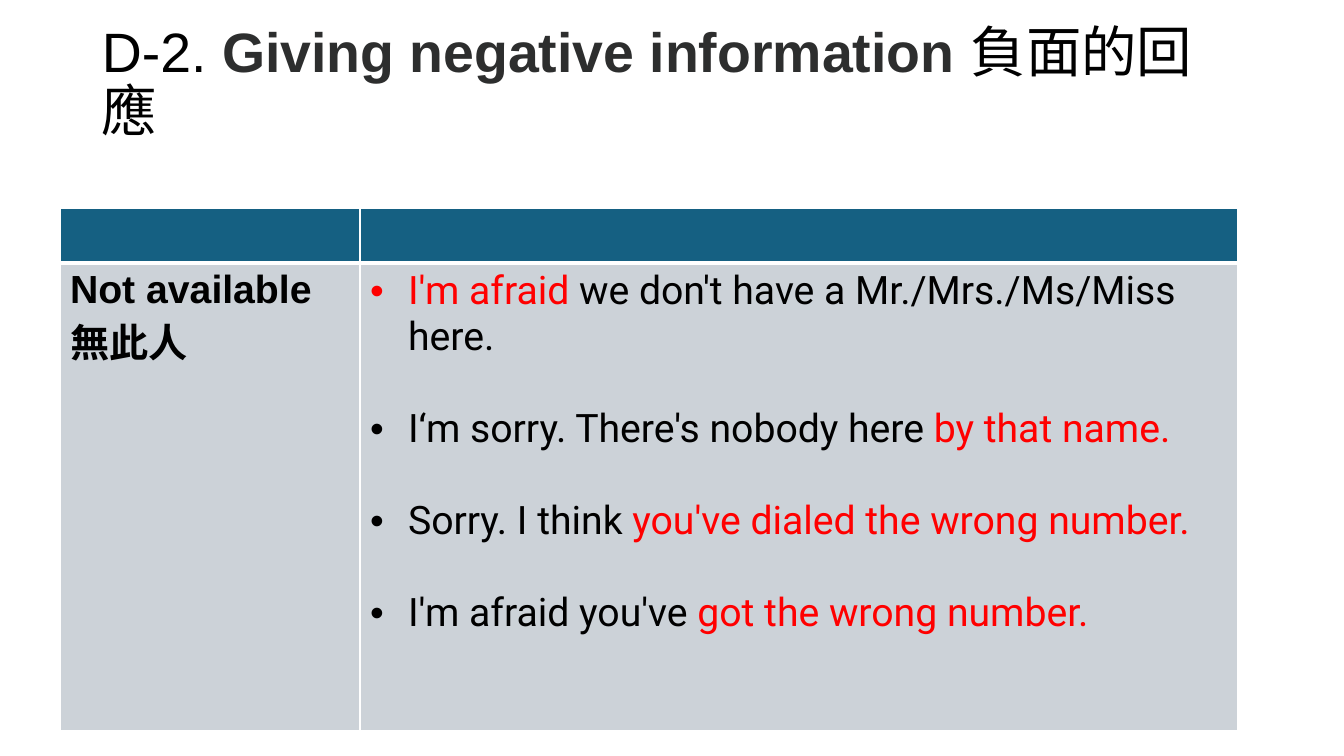
from lxml import etree
from pptx import Presentation
from pptx.dml.color import RGBColor
from pptx.enum.text import MSO_ANCHOR
from pptx.oxml.ns import qn
from pptx.util import Pt

MIDDLE = MSO_ANCHOR.MIDDLE
BLACK, GREY, RED, WHITE = "000000", "2D2E2E", "FF0000", "FFFFFF"
HEADER_FILL, BODY_FILL = "156082", "CCD2D8"

# Content: runs are (text, colour, bold)
TITLE = [("D-2. ", BLACK, False),
         ("Giving negative information ", GREY, True),
         ("負面的回應", BLACK, False)]
TOPIC = ["Not available", "無此人"]
PHRASES = [
    [("I'm afraid ", RED, False),
     ("we don't have a Mr./Mrs./Ms/Miss here.", BLACK, False)],
    [("I‘m sorry. There's nobody here ", BLACK, False),
     ("by that name.", RED, False)],
    [("Sorry. I think ", BLACK, False),
     ("you've dialed the wrong number.", RED, False)],
    [("I'm afraid you've ", BLACK, False),
     ("got the wrong number.", RED, False)],
]

# Layout in px
SLIDE_W, SLIDE_H = 1344, 756
TITLE_BOX = (92, 40, 1159, 146)
TITLE_BOTTOM_INSET = 63
TABLE_X, TABLE_Y = 60, 208
COLS, ROWS = [300, 878], [55, 468]
BULLET_INDENT = 38


def px(n):
    return round(n * 12192000 / SLIDE_W)


def rgb(hex_colour):
    return RGBColor.from_string(hex_colour)


def add_runs(p, runs, font, size):
    for text, colour, bold in runs:
        r = p.add_run()
        r.text = text
        r.font.name, r.font.size, r.font.bold = font, Pt(size), bold
        r.font.color.rgb = rgb(colour)


def add_bullet(p):
    pPr = p._p.get_or_add_pPr()
    pPr.set("marL", str(px(BULLET_INDENT)))
    pPr.set("indent", str(-px(BULLET_INDENT)))
    etree.SubElement(pPr, qn("a:buFont")).set("typeface", "Arial")
    etree.SubElement(pPr, qn("a:buChar")).set("char", "•")


def style_cell(cell, fill, top, bottom):
    cell.fill.solid()
    cell.fill.fore_color.rgb = rgb(fill)
    tcPr = cell._tc.get_or_add_tcPr()
    widths = {"a:lnL": 1, "a:lnR": 1, "a:lnT": top, "a:lnB": bottom}
    for i, (tag, width) in enumerate(widths.items()):
        ln = etree.Element(qn(tag), w=str(Pt(width)))
        line_fill = etree.SubElement(ln, qn("a:solidFill"))
        etree.SubElement(line_fill, qn("a:srgbClr")).set("val", WHITE)
        tcPr.insert(i, ln)


def paragraphs(tf, count):
    return [tf.paragraphs[0]] + [tf.add_paragraph() for _ in range(count - 1)]


prs = Presentation()
prs.slide_width, prs.slide_height = px(SLIDE_W), px(SLIDE_H)
s = prs.slides.add_slide(prs.slide_layouts[6])

# Title
tf = s.shapes.add_textbox(*map(px, TITLE_BOX)).text_frame
tf.word_wrap = True
tf.vertical_anchor = MIDDLE
tf.margin_bottom = px(TITLE_BOTTOM_INSET)
p = tf.paragraphs[0]
p.line_spacing = 0.9
add_runs(p, TITLE, "Arial", 39.6)

# Table
table = s.shapes.add_table(len(ROWS), len(COLS), px(TABLE_X), px(TABLE_Y),
                           px(sum(COLS)), px(sum(ROWS))).table
for column, width in zip(table.columns, COLS):
    column.width = px(width)
for row, height in zip(table.rows, ROWS):
    row.height = px(height)
for c in range(len(COLS)):
    style_cell(table.cell(0, c), HEADER_FILL, 1, 3)
    style_cell(table.cell(1, c), BODY_FILL, 3, 1)

# Topic and phrases
for p, text in zip(paragraphs(table.cell(1, 0).text_frame, len(TOPIC)), TOPIC):
    add_runs(p, [(text, BLACK, True)], "Arial", 28)
for p, runs in zip(paragraphs(table.cell(1, 1).text_frame, len(PHRASES)), PHRASES):
    p.space_after = Pt(33)
    add_bullet(p)
    add_runs(p, runs, "Roboto", 28)

prs.save("out.pptx")
